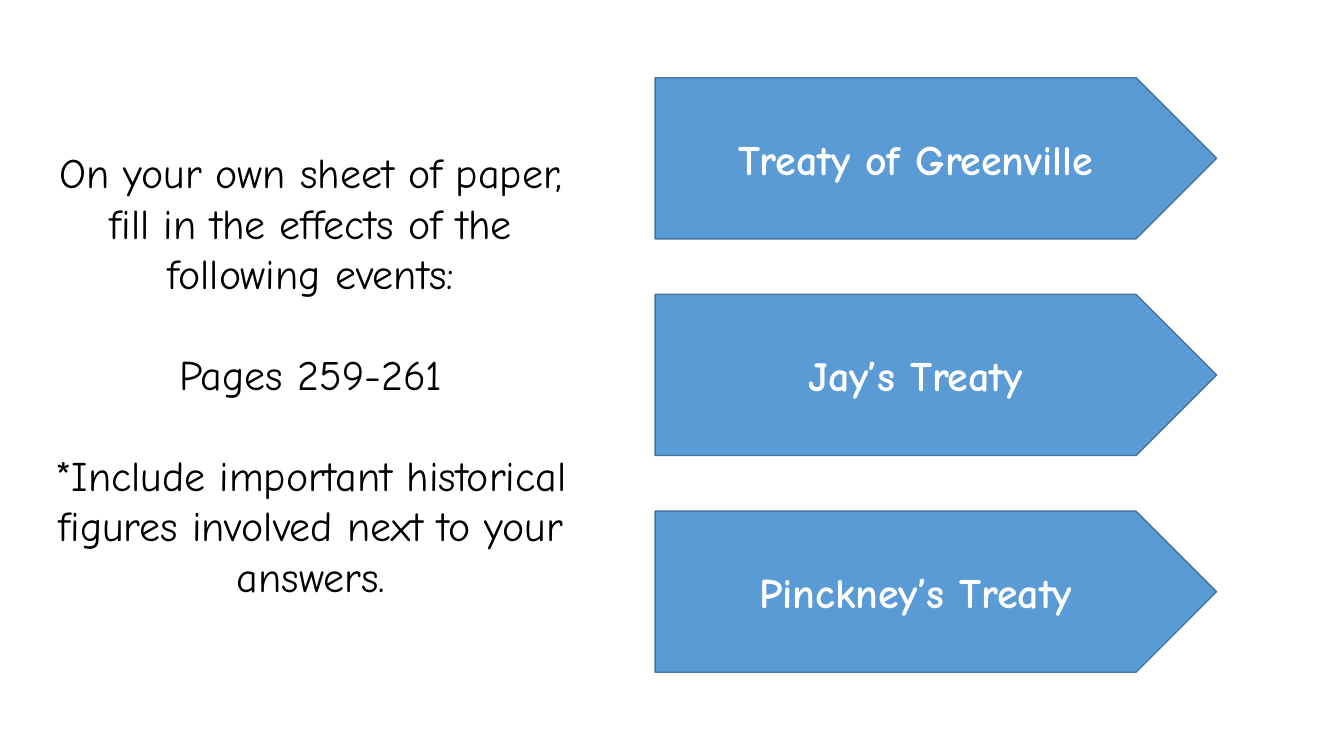
from pptx import Presentation
from pptx.dml.color import RGBColor
from pptx.enum.shapes import MSO_SHAPE as Shape
from pptx.enum.text import MSO_ANCHOR as Anchor, PP_ALIGN as Align
from pptx.util import Cm, Pt

FONT = "Comic Neue"
SIZE = 30
NOTES = [
    "On your own sheet of paper, fill in the effects of the following events:",
    "Pages 259-261",
    "*Include important historical figures involved next to your answers.",
]
EVENTS = ["Treaty of Greenville", "Jay’s Treaty", "Pinckney’s Treaty"]


def color(code):
    """Turn a hex string into a colour."""
    return RGBColor.from_string(code)


def style(para, text, code, bold=False):
    """Fill a centred paragraph with text in the slide's font."""
    para.text = text
    para.alignment = Align.CENTER
    font = para.font
    font.name, font.size, font.bold = FONT, Pt(SIZE), bold
    font.color.rgb = color(code)


def add_notes(slide, left, top, width, height):
    """Write the instructions in the given box, a line's gap between them."""
    box = slide.shapes.add_textbox(Cm(left), Cm(top), Cm(width), Cm(height))
    frame = box.text_frame
    frame.word_wrap = True
    for i, text in enumerate(NOTES):
        para = frame.add_paragraph() if i else frame.paragraphs[0]
        style(para, text, "000000")
        para.space_before = Pt(36 if i else 0)


def add_events(slide, left, top, width, height, tall=4.06):
    """Spread the event arrows evenly down the given box."""
    step = (height - tall) / (len(EVENTS) - 1)
    for i, text in enumerate(EVENTS):
        arrow = slide.shapes.add_shape(
            Shape.PENTAGON, Cm(left), Cm(top + i * step), Cm(width), Cm(tall))
        arrow.shadow.inherit = False
        arrow.fill.solid()
        arrow.fill.fore_color.rgb = color("5B9BD5")
        arrow.line.color.rgb = color("43739E")
        arrow.line.width = Pt(1)
        frame = arrow.text_frame
        frame.word_wrap = True
        frame.vertical_anchor = Anchor.MIDDLE
        style(frame.paragraphs[0], text, "FFFFFF", True)


def main():
    """Build the slide and save it."""
    deck = Presentation()
    deck.slide_width, deck.slide_height = Cm(33.87), Cm(19.05)
    slide = deck.slides.add_slide(deck.slide_layouts[6])
    add_notes(slide, 0.94, 3.58, 13.79, 11.79)
    add_events(slide, 16.51, 1.96, 14.15, 14.98)
    deck.save("out.pptx")


if __name__ == "__main__":
    main()
